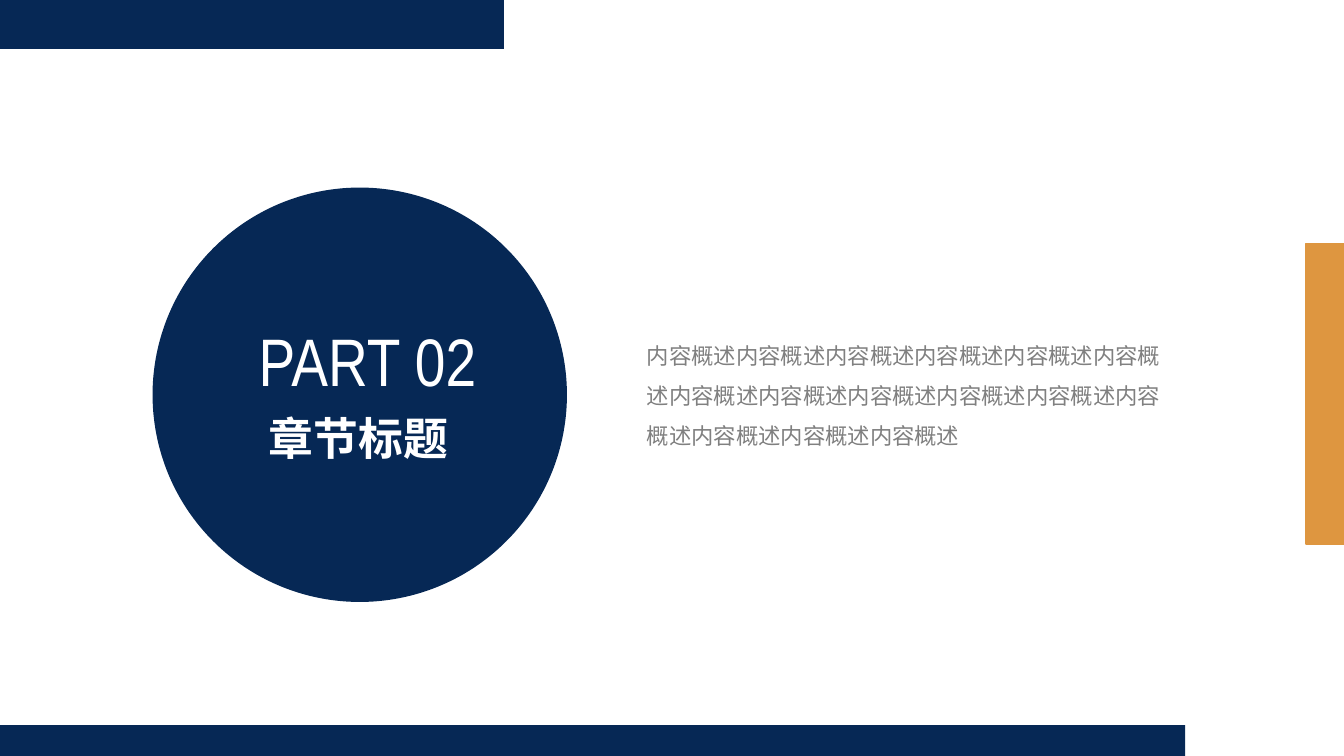
from dataclasses import dataclass

from lxml import etree
from pptx import Presentation
from pptx.dml.color import RGBColor
from pptx.enum.shapes import MSO_SHAPE
from pptx.enum.text import MSO_AUTO_SIZE, PP_ALIGN
from pptx.oxml.ns import qn
from pptx.slide import Slide
from pptx.util import Pt

RECT, OVAL = MSO_SHAPE.RECTANGLE, MSO_SHAPE.OVAL
LEFT, CENTER = PP_ALIGN.LEFT, PP_ALIGN.CENTER
FIT_SHAPE = MSO_AUTO_SIZE.SHAPE_TO_FIT_TEXT

COLORS = {"navy": "062855", "orange": "DE9640", "gray": "808080", "white": "FFFFFF"}
CJK_FONT = "Noto Sans CJK SC"
LATIN_FONT = "Arial Narrow"


@dataclass
class Block:
    kind: MSO_SHAPE
    left: float
    top: float
    width: float
    height: float
    color: str
    outlined: bool = False


@dataclass
class Label:
    text: str
    left: float
    top: float
    width: float
    height: float
    size: float
    color: str
    font: str = CJK_FONT
    bold: bool = False
    align: PP_ALIGN = LEFT
    line_spacing: float = 1.0


BLOCKS = [
    Block(OVAL, 109, 134, 296, 296, "navy"),
    Block(RECT, 0, 0, 360, 35, "navy"),
    Block(RECT, 933, 174, 27, 214.5, "orange", outlined=True),
    Block(RECT, 0, 518, 846.5, 22, "navy"),
]

LABELS = [
    Label("章节标题", 185, 289.5, 145, 46, 32, "white", bold=True),
    Label("内容概述" * 15, 455, 231, 386, 91.5, 16, "gray", line_spacing=1.5),
    Label("PART 02", 114.5, 224.5, 296, 65.5, 48, "white", LATIN_FONT, align=CENTER),
]


def rgb(name: str) -> RGBColor:
    return RGBColor.from_string(COLORS[name])


def add_block(s: Slide, block: Block) -> None:
    sp = s.shapes.add_shape(
        block.kind, Pt(block.left), Pt(block.top), Pt(block.width), Pt(block.height)
    )
    sp.shadow.inherit = False
    sp.fill.solid()
    sp.fill.fore_color.rgb = rgb(block.color)
    if block.outlined:
        sp.line.color.rgb = rgb(block.color)
        sp.line.width = Pt(1)
    else:
        sp.line.fill.background()


def add_label(s: Slide, label: Label) -> None:
    sp = s.shapes.add_textbox(
        Pt(label.left), Pt(label.top), Pt(label.width), Pt(label.height)
    )
    tf = sp.text_frame
    tf.word_wrap = True
    tf.auto_size = FIT_SHAPE
    tf.text = label.text
    p = tf.paragraphs[0]
    p.alignment = label.align
    p.line_spacing = label.line_spacing
    r = p.runs[0]
    r.font.size = Pt(label.size)
    r.font.bold = label.bold
    r.font.color.rgb = rgb(label.color)
    r.font.name = label.font
    # East Asian characters take their typeface from a:ea
    ea = etree.SubElement(r.font._element, qn("a:ea"))
    ea.set("typeface", label.font)


def main() -> None:
    prs = Presentation()
    prs.slide_width, prs.slide_height = Pt(960), Pt(540)
    s = prs.slides.add_slide(prs.slide_layouts[6])
    for block in BLOCKS:
        add_block(s, block)
    for label in LABELS:
        add_label(s, label)
    prs.save("out.pptx")


if __name__ == "__main__":
    main()
